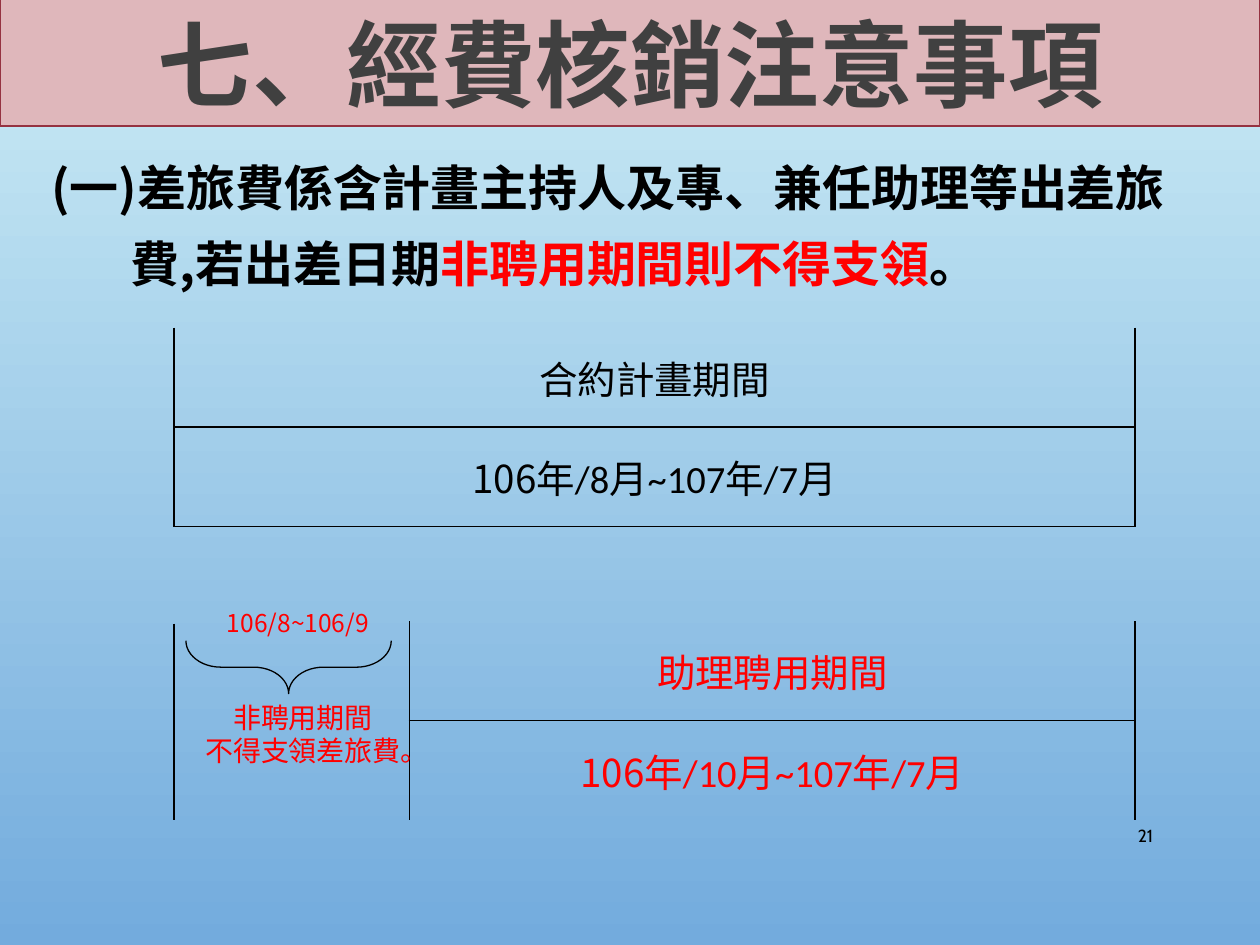
"""Build the slide on travel expenses inside and outside the assistant's employment period."""
import dataclasses

import pptx
import pptx.dml.color
import pptx.enum.shapes
import pptx.enum.text
import pptx.oxml
import pptx.oxml.ns
import pptx.util


@dataclasses.dataclass(frozen=True)
class Theme:
    sky_top: str = "CBECF5"
    sky_bottom: str = "73ABDD"
    band: str = "DFB7BB"
    band_edge: str = "953241"
    heading: str = "404040"
    ink: str = "000000"
    alert: str = "FF0000"
    cjk: str = "Noto Sans CJK SC"
    latin: str = "Calibri"
    note: str = "Arial"
    number: str = "Cabin"
    title_size: int = 54
    rule_size: int = 28
    period_size: int = 22
    note_size: int = 16
    month_size: int = 14
    number_size: int = 10


theme = Theme()
rgb = pptx.dml.color.RGBColor.from_string
qn = pptx.oxml.ns.qn
align = pptx.enum.text.PP_ALIGN
middle = pptx.enum.text.MSO_ANCHOR.MIDDLE

deck = pptx.Presentation()
deck.slide_width, deck.slide_height = pptx.util.Inches(10), pptx.util.Inches(7.5)
unit = deck.slide_width / 100


def grid(*cells):
    return [round(cell * unit) for cell in cells]


def write(frame, lines, size, color=theme.ink, font=theme.cjk, bold=False,
          alignment=align.CENTER, anchor=None, gap=0):
    frame.word_wrap = True
    frame.vertical_anchor = anchor
    for index, pieces in enumerate(lines):
        paragraph = frame.add_paragraph() if index else frame.paragraphs[0]
        paragraph.alignment = alignment
        paragraph.space_before = pptx.util.Pt(gap if index else 0)
        for text, changes in pieces:
            run = paragraph.add_run()
            run.text = text
            run.font.size = pptx.util.Pt(size)
            run.font.bold = bold
            run.font.name = changes.get("font", font)
            run.font.color.rgb = rgb(changes.get("color", color))
            east_asian = run.font._element.makeelement(qn("a:ea"), {"typeface": theme.cjk})
            run.font._element.find(qn("a:latin")).addnext(east_asian)


slide = deck.slides.add_slide(deck.slide_layouts[5])
sky = slide.background.fill
sky.gradient()
sky.gradient_angle = 270
for stop, color in zip(sky.gradient_stops, (theme.sky_top, theme.sky_bottom)):
    stop.color.rgb = rgb(color)

title = slide.shapes.title
title.left, title.top, title.width, title.height = grid(0, -0.1, 100, 10.1)
title.fill.solid()
title.fill.fore_color.rgb = rgb(theme.band)
title.line.color.rgb = rgb(theme.band_edge)
title.line.width = pptx.util.Pt(0.75)
write(title.text_frame, [[("七、經費核銷注意事項", {})]], theme.title_size,
      color=theme.heading, bold=True, anchor=middle)
title.text_frame.auto_size = pptx.enum.text.MSO_AUTO_SIZE.NONE

rule = slide.shapes.add_textbox(*grid(3.1, 1.15 * 10, 93.7, 56.7)).text_frame
rule.margin_top, rule.margin_right = grid(1, 0)
write(rule, [
    [("(一)差旅費係含計畫主持人及專、兼任助理等出差旅", {})],
    [("費,若出差日期", {}), ("非聘用期間則不得支領", {"color": theme.alert}), ("。", {})],
], theme.rule_size, bold=True, alignment=align.LEFT, gap=10)
rule.paragraphs[1]._p.get_or_add_pPr().set("marL", str(grid(6.3)[0]))

table_left, table_top = 13.8, 26
columns = [18.7, 3.4, 9.5, 9.5, 9.5, 25.7]
rows = [7.9, 7.9, 7.5, 7.9, 7.9]
last = len(columns) - 1
frame = slide.shapes.add_table(len(rows), len(columns),
                               *grid(table_left, table_top, sum(columns), sum(rows)))
periods = frame.table
periods.first_row = periods.horz_banding = False
periods._tbl.tblPr.find(qn("a:tableStyleId")).text = "{2D5ABB26-0587-4C30-8999-92F81FD0307C}"
for column, width in zip(periods.columns, grid(*columns)):
    column.width = width
for row, height in zip(periods.rows, grid(*rows)):
    row.height = height

latin = {"font": theme.latin}
entries = {
    0: (0, theme.ink, [("合約計畫期間", latin)]),
    1: (0, theme.ink, [("106", {}), ("年/8月~107年/7月", latin)]),
    3: (1, theme.alert, [("助理聘用期間", latin)]),
    4: (1, theme.alert, [("106", {}), ("年/10月~107年/7月", latin)]),
}
for row, (start, color, pieces) in entries.items():
    cell = periods.cell(row, start)
    cell.merge(periods.cell(row, last))
    cell.margin_left, cell.margin_right, cell.margin_top, cell.margin_bottom = grid(0.2, 0.2, 0, 0)
    write(cell.text_frame, [pieces], theme.period_size, color=color)
    cell.vertical_anchor = middle

for row in range(len(rows)):
    for column in range(len(columns)):
        cell = periods.cell(row, column)
        if row in entries:
            start = entries[row][0]
            edges = {
                "lnL": column == start,
                "lnR": column in (0, start, last),
                "lnT": row in (1, 4) and column >= start,
                "lnB": row in (0, 3) and column >= start,
            }
            properties = cell._tc.get_or_add_tcPr()
            for edge in (name for name, drawn in edges.items() if drawn):
                properties.append(pptx.oxml.parse_xml(
                    f'<a:{edge} {pptx.oxml.ns.nsdecls("a")} w="12700"><a:solidFill>'
                    f'<a:srgbClr val="{theme.ink}"/></a:solidFill></a:{edge}>'))
        cell.fill.background()

brace = slide.shapes.add_shape(pptx.enum.shapes.MSO_SHAPE.RIGHT_BRACE,
                               *grid(20.8, 44.8, 4.2, 16.3))
brace.rotation = 90
brace.adjustments[0], brace.adjustments[1] = 0.66, 0.5
brace.shadow.inherit = False
brace.fill.background()

start_edge = slide.shapes.add_connector(
    pptx.enum.shapes.MSO_CONNECTOR.STRAIGHT,
    *grid(table_left, table_top + sum(rows[:3]) + 0.2, table_left, table_top + sum(rows)))
start_edge._element.spPr.get_or_add_ln().addnext(
    start_edge._element.makeelement(qn("a:effectLst"), {}))
for stroke in (brace.line, start_edge.line):
    stroke.color.rgb = rgb(theme.ink)
    stroke.width = pptx.util.Pt(0.75)

months = slide.shapes.add_textbox(*grid(15.8, 47.8, 15.7, 3.4)).text_frame
write(months, [[("106/8~106/9", {})]], theme.month_size, color=theme.alert)

warning = slide.shapes.add_textbox(*grid(14.8, 55.1, 18.5, 6.4)).text_frame
write(warning, [[("非聘用期間", {})], [("不得支領差旅費。", {})]], theme.note_size,
      color=theme.alert, font=theme.note)

page = slide.shapes.add_textbox(*grid(86.2, 64.3, 6.3, 4)).text_frame
write(page, [[("21", {})]], theme.number_size, font=theme.number,
      alignment=align.RIGHT, anchor=middle)

deck.save("out.pptx")
